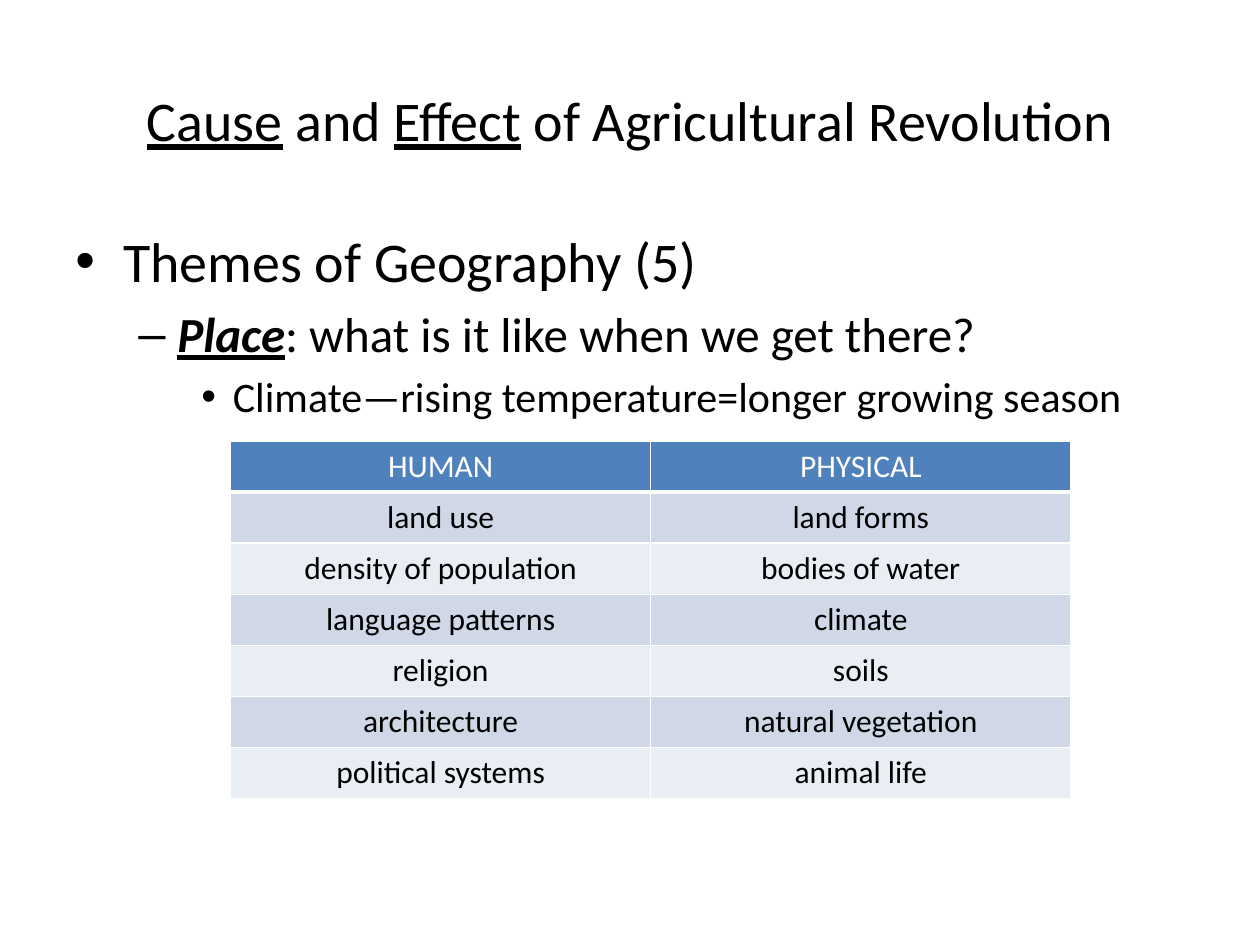
from lxml import etree
from pptx import Presentation
from pptx.dml.color import RGBColor
from pptx.enum.text import MSO_ANCHOR, PP_ALIGN
from pptx.oxml.ns import qn
from pptx.util import Inches, Pt

FONT = "Calibri"
BLACK, WHITE = "000000", "FFFFFF"
HEADER_FILL, BAND_FILLS = "4F81BD", ("D0D8E8", "E9EDF4")

TITLE = [("Cause", "u"), (" and ", ""), ("Effect", "u"),
         (" of Agricultural Revolution", "")]

# size, left margin, hanging indent, bullet, runs
OUTLINE = [
    (32, 0.38, 0.38, "•", [("Themes of Geography (5)", "")]),
    (28, 0.81, 0.31, "–", [("Place", "biu"),
                           (": what is it like when we get there?", "")]),
    (24, 1.25, 0.25, "•", [("Climate—rising temperature=longer growing season", "")]),
]

FEATURES = [
    ("HUMAN", "PHYSICAL"),
    ("land use", "land forms"),
    ("density of population", "bodies of water"),
    ("language patterns", "climate"),
    ("religion", "soils"),
    ("architecture", "natural vegetation"),
    ("political systems", "animal life"),
]


def rgb(value):
    return RGBColor.from_string(value)


def add_runs(para, runs, size, color=BLACK):
    """Add (text, style) runs; style letters are b, i and u."""
    for text, style in runs:
        span = para.add_run()
        span.text = text
        font = span.font
        font.name, font.size, font.color.rgb = FONT, Pt(size), rgb(color)
        font.bold, font.italic, font.underline = (key in style for key in "biu")


def set_bullet(para, symbol, margin, hanging):
    props = para._p.get_or_add_pPr()
    props.set("marL", str(Inches(margin)))
    props.set("indent", str(-Inches(hanging)))
    etree.SubElement(props, qn("a:buFont"), typeface="Arial")
    etree.SubElement(props, qn("a:buChar"), char=symbol)


def set_borders(cell, color, bottom):
    """Draw 1 pt borders, with the bottom one at its own width."""
    props = cell._tc.get_or_add_tcPr()
    for side, width in (("L", 1), ("R", 1), ("T", 1), ("B", bottom)):
        line = etree.SubElement(props, qn(f"a:ln{side}"), w=str(Pt(width)))
        fill = etree.SubElement(line, qn("a:solidFill"))
        etree.SubElement(fill, qn("a:srgbClr"), val=color)


def place_title(page, left, top, width, height):
    title = page.shapes.title
    title.left, title.top = Inches(left), Inches(top)
    title.width, title.height = Inches(width), Inches(height)
    title.text_frame.vertical_anchor = MSO_ANCHOR.MIDDLE
    para = title.text_frame.paragraphs[0]
    para.alignment = PP_ALIGN.CENTER
    add_runs(para, TITLE, 32)


def add_outline(page, left, top, width, height):
    box = page.shapes.add_textbox(Inches(left), Inches(top),
                                  Inches(width), Inches(height))
    frame = box.text_frame
    frame.word_wrap = True
    for level, (size, margin, hanging, symbol, runs) in enumerate(OUTLINE):
        para = frame.add_paragraph() if level else frame.paragraphs[0]
        para.level = level
        if level:
            para.space_before = Pt(size * 0.2)
        set_bullet(para, symbol, margin, hanging)
        add_runs(para, runs, size)


def add_feature_table(page, left, top, width, height):
    table = page.shapes.add_table(len(FEATURES), len(FEATURES[0]),
                                  Inches(left), Inches(top),
                                  Inches(width), Inches(height)).table
    for row, texts in enumerate(FEATURES):
        header = row == 0
        for column, text in enumerate(texts):
            cell = table.cell(row, column)
            set_borders(cell, WHITE, 3 if header else 1)
            cell.fill.solid()
            cell.fill.fore_color.rgb = rgb(
                HEADER_FILL if header else BAND_FILLS[(row - 1) % 2])
            para = cell.text_frame.paragraphs[0]
            para.alignment = PP_ALIGN.CENTER
            add_runs(para, [(text, "")], 18, WHITE if header else BLACK)


def main():
    deck = Presentation()
    deck.slide_width, deck.slide_height = Inches(10), Inches(7.5)
    page = deck.slides.add_slide(deck.slide_layouts[5])
    place_title(page, 0.5, 0.32, 9, 1.25)
    add_outline(page, 0.5, 1.75, 9, 4.95)
    add_feature_table(page, 1.83, 3.5, 6.67, 2.84)
    deck.save("out.pptx")


if __name__ == "__main__":
    main()
